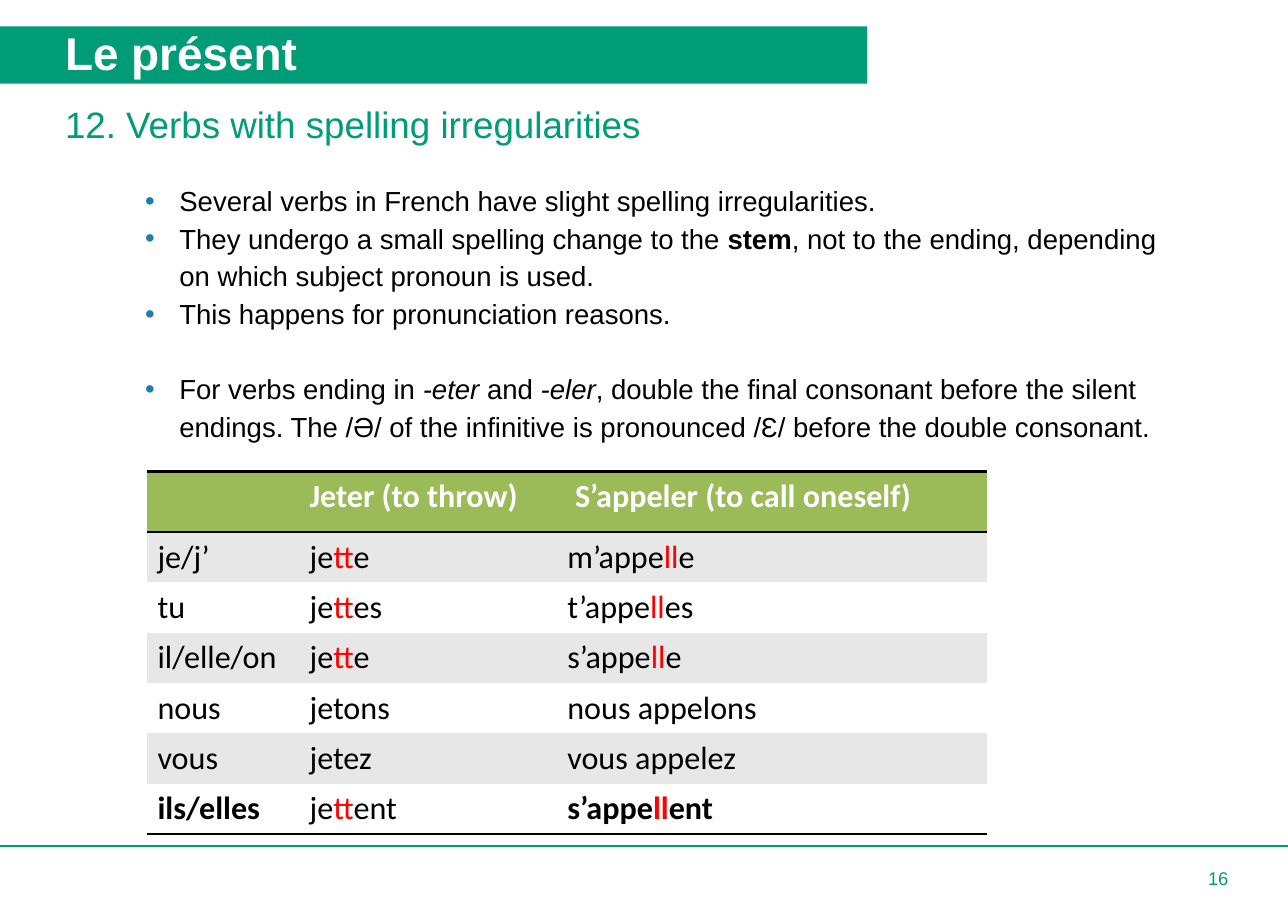
from lxml.etree import SubElement
from pptx import Presentation
from pptx.dml.color import RGBColor
from pptx.enum.shapes import MSO_CONNECTOR
from pptx.enum.text import MSO_ANCHOR, MSO_AUTO_SIZE, PP_ALIGN
from pptx.oxml import parse_xml
from pptx.oxml.ns import nsdecls, qn
from pptx.util import Inches, Pt

GREEN = RGBColor(0x00, 0x9C, 0x78)
HEADER_GREEN = RGBColor(0x9B, 0xBB, 0x59)
BAND_GREY = RGBColor(0xE7, 0xE7, 0xE7)
WHITE = RGBColor(0xFF, 0xFF, 0xFF)
BLACK = RGBColor(0x00, 0x00, 0x00)
RED = RGBColor(0xFF, 0x00, 0x00)
BULLET_BLUE = RGBColor(0x19, 0x80, 0xA9)
PLAIN_TABLE_STYLE = "{2D5ABB26-0587-4C30-8999-92F81FD0307C}"

# Text between bars is emphasised.
BULLETS = [
    ("Several verbs in French have slight spelling irregularities.", None),
    ("They undergo a small spelling change to the |stem|, not to the ending, "
     "depending on which subject pronoun is used.", "bold"),
    ("This happens for pronunciation reasons.", None),
    ("For verbs ending in |-eter| and |-eler|, double the final consonant before "
     "the silent endings. The /Ə/ of the infinitive is pronounced /Ɛ/ before "
     "the double consonant.", "italic"),
]
CONJUGATION = [
    ("", "Jeter (to throw)", "S’appeler (to call oneself)"),
    ("je/j’", "je|tt|e", "m’appe|ll|e"),
    ("tu", "je|tt|es", "t’appe|ll|es"),
    ("il/elle/on", "je|tt|e", "s’appe|ll|e"),
    ("nous", "jetons", "nous appelons"),
    ("vous", "jetez", "vous appelez"),
    ("ils/elles", "je|tt|ent", "s’appe|ll|ent"),
]
COLUMN_WIDTHS = [1.38, 2.34, 3.91]
HEADER_HEIGHT, ROW_HEIGHT = 0.55, 0.45


class LessonSlide:
    font_name = "Arial"
    table_font = "Calibri"
    left_indent = 0.59

    def __init__(self, presentation):
        self.slide = presentation.slides.add_slide(presentation.slide_layouts[5])
        self.shapes = self.slide.shapes

    def style(self, paragraph, size, color, bold=False, name=None):
        font = paragraph.font
        font.name, font.size, font.bold = name or self.font_name, Pt(size), bold
        font.color.rgb = color

    def frame(self, shape, margins, anchor):
        frame = shape.text_frame
        frame.word_wrap, frame.auto_size = True, MSO_AUTO_SIZE.NONE
        frame.vertical_anchor = anchor
        (frame.margin_left, frame.margin_top,
         frame.margin_right, frame.margin_bottom) = map(Inches, margins)
        return frame

    def add_marked_runs(self, paragraph, marked_text, emphasise):
        """Write text whose parts between bars get the emphasis."""
        for index, part in enumerate(marked_text.split("|")):
            run = paragraph.add_run()
            run.text = part
            if index % 2:
                emphasise(run.font)

    def title(self, text, left, top, width, height):
        banner = self.shapes.title
        banner.left, banner.top = Inches(left), Inches(top)
        banner.width, banner.height = Inches(width), Inches(height)
        banner.fill.solid()
        banner.fill.fore_color.rgb = GREEN
        self.heading(banner, text, 30, WHITE, bold=True)

    def heading(self, shape, text, size, color, bold=False):
        frame = self.frame(shape, (self.left_indent, 0, 0, 0.05), MSO_ANCHOR.MIDDLE)
        frame.text = text
        frame.paragraphs[0].alignment = PP_ALIGN.LEFT
        self.style(frame.paragraphs[0], size, color, bold)

    def box(self, left, top, width, height):
        return self.shapes.add_textbox(*map(Inches, (left, top, width, height)))

    def bullets(self, items, left, top, width, height):
        frame = self.frame(self.box(left, top, width, height),
                           (0.1, 0.05, 0.1, 0.05), MSO_ANCHOR.TOP)
        for index, (text, emphasis) in enumerate(items):
            paragraph = frame.add_paragraph() if index else frame.paragraphs[0]
            paragraph.line_spacing = Pt(24.6)
            if index == len(items) - 1:
                paragraph.space_before = Pt(24.6)
            properties = paragraph._p.get_or_add_pPr()
            properties.set("marL", str(Inches(0.31)))
            properties.set("indent", str(Inches(-0.31)))
            bullet_color = SubElement(properties, qn("a:buClr"))
            SubElement(bullet_color, qn("a:srgbClr"), val=str(BULLET_BLUE))
            SubElement(properties, qn("a:buFont"), typeface=self.font_name)
            SubElement(properties, qn("a:buChar"), char="•")
            self.style(paragraph, 18, BLACK)
            self.add_marked_runs(paragraph, text,
                                 lambda font: setattr(font, emphasis, True))

    def rule(self, left, top, right):
        line = self.shapes.add_connector(
            MSO_CONNECTOR.STRAIGHT, Inches(left), Inches(top), Inches(right), Inches(top))
        line.line.color.rgb, line.line.width = GREEN, Pt(0.75)
        SubElement(line._element.spPr, qn("a:effectLst"))

    def page_number(self, number, left, top, width, height):
        frame = self.frame(self.box(left, top, width, height),
                           (0, 0.05, 0.54, 0.05), MSO_ANCHOR.MIDDLE)
        frame.text = number
        frame.paragraphs[0].alignment = PP_ALIGN.RIGHT
        self.style(frame.paragraphs[0], 12, GREEN)

    def border(self, cell, sides):
        properties = cell._tc.get_or_add_tcPr()
        for position, side in enumerate(sides):
            properties.insert(position, parse_xml(
                f'<a:ln{side} {nsdecls("a")} w="{Pt(2)}"><a:solidFill>'
                f'<a:srgbClr val="{BLACK}"/></a:solidFill></a:ln{side}>'))

    def conjugation_table(self, rows, left, top):
        last = len(rows) - 1
        table = self.shapes.add_table(
            len(rows), len(COLUMN_WIDTHS), Inches(left), Inches(top),
            Inches(sum(COLUMN_WIDTHS)), Inches(HEADER_HEIGHT + last * ROW_HEIGHT)).table
        table._tbl.tblPr.find(qn("a:tableStyleId")).text = PLAIN_TABLE_STYLE
        for column, width in zip(table.columns, COLUMN_WIDTHS):
            column.width = Inches(width)
        for r, texts in enumerate(rows):
            header = r == 0
            table.rows[r].height = Inches(HEADER_HEIGHT if header else ROW_HEIGHT)
            for c, text in enumerate(texts):
                cell = table.cell(r, c)
                cell.fill.solid()
                cell.fill.fore_color.rgb = (
                    HEADER_GREEN if header else BAND_GREY if r % 2 else WHITE)
                cell.margin_left = Inches(0.17 if header and c == 2 else 0.1)
                paragraph = cell.text_frame.paragraphs[0]
                self.style(paragraph, 21, WHITE if header else BLACK,
                           bold=header or (r == last and c != 1), name=self.table_font)
                if text:
                    self.add_marked_runs(paragraph, text,
                                         lambda font: setattr(font.color, "rgb", RED))
                if header or r == last:
                    self.border(cell, "TB" if header else "B")


def main():
    presentation = Presentation()
    presentation.slide_width, presentation.slide_height = Inches(11.69), Inches(8.27)
    lesson = LessonSlide(presentation)
    lesson.page_number("16", 10.28, 7.68, 1.41, 0.59)
    lesson.rule(0, 7.68, 11.69)
    lesson.title("Le présent", 0, 0.24, 7.87, 0.52)
    lesson.heading(lesson.box(0, 0.89, 11.69, 0.51),
                   "12. Verbs with spelling irregularities", 24, GREEN)
    lesson.bullets(BULLETS, 1.22, 1.58, 9.46, 2.6)
    lesson.conjugation_table(CONJUGATION, 1.33, 4.28)
    presentation.save("out.pptx")


if __name__ == "__main__":
    main()
